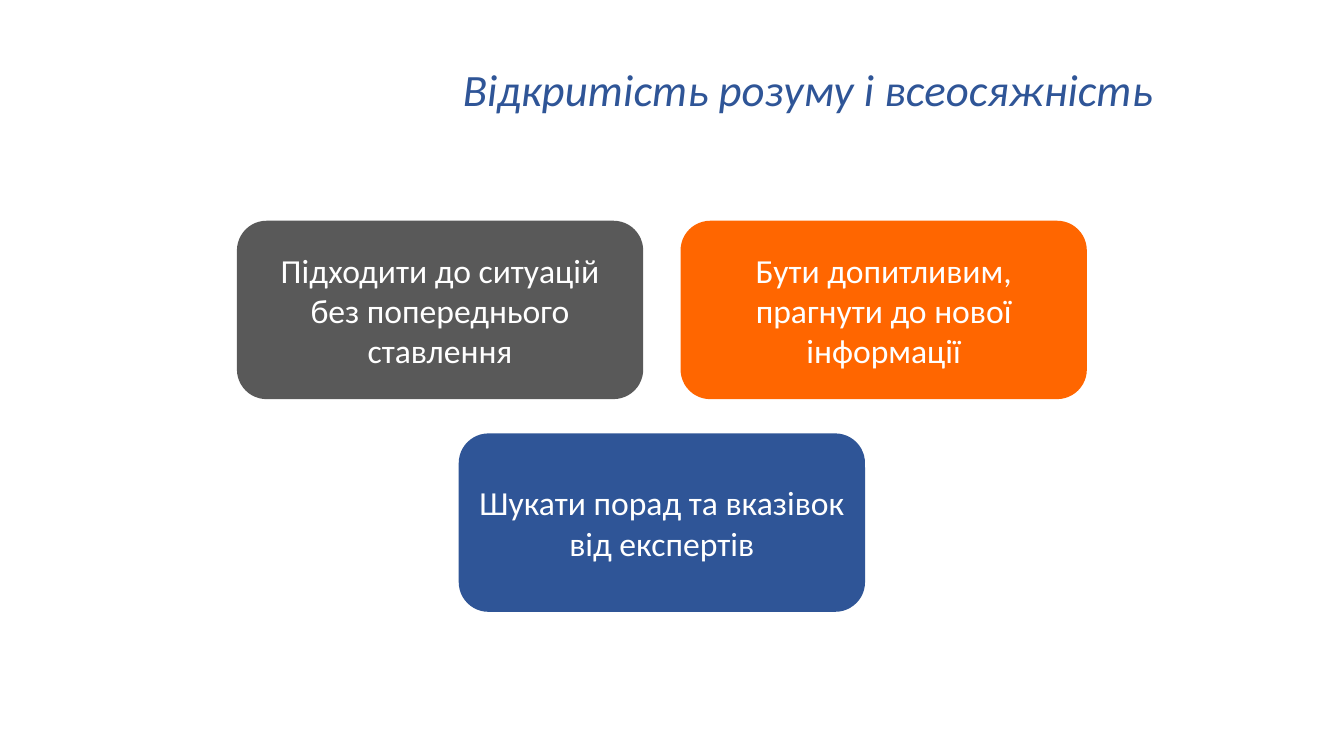
import pptx
import pptx.util
import pptx.dml.color
import pptx.enum.shapes
import pptx.enum.text

PX = 9144  # EMU in one px, 100 px to the inch
BLUE = "2F5597"
CARDS = [
    ("Підходити до ситуацій без попереднього ставлення", "595959"),
    ("Бути допитливим, прагнути до нової інформації", "FF6600"),
    ("Шукати порад та вказівок від експертів", BLUE),
]


def color(code):
    return pptx.dml.color.RGBColor.from_string(code)


def place(*box):
    return [pptx.util.Emu(n * PX) for n in box]


def style(par, size, code, align):
    par.alignment = align
    par.font.name = "Calibri"
    par.font.size = pptx.util.Pt(size)
    par.font.color.rgb = color(code)


def add_title(slide, text, box):
    title = slide.shapes.title
    title.left, title.top, title.width, title.height = place(*box)
    frame = title.text_frame
    frame.text = text
    frame.auto_size = pptx.enum.text.MSO_AUTO_SIZE.NONE
    frame.vertical_anchor = pptx.enum.text.MSO_ANCHOR.MIDDLE
    par = frame.paragraphs[0]
    par.line_spacing = 0.9
    style(par, 32, BLUE, pptx.enum.text.PP_ALIGN.LEFT)
    par.font.italic = True


def add_card(slide, text, fill, box):
    kind = pptx.enum.shapes.MSO_SHAPE.ROUNDED_RECTANGLE
    card = slide.shapes.add_shape(kind, *place(*box))
    card.shadow.inherit = False
    card.fill.solid()
    card.fill.fore_color.rgb = color(fill)
    card.line.fill.background()
    frame = card.text_frame
    frame.word_wrap = True
    frame.vertical_anchor = pptx.enum.text.MSO_ANCHOR.MIDDLE
    frame.text = text
    style(frame.paragraphs[0], 24, "FFFFFF", pptx.enum.text.PP_ALIGN.CENTER)


def add_cards(slide, cards, box):
    """Two cards to a row, with a lone last card centred."""
    left, top, width, height = box
    wide, high = 403, 177
    step_x, step_y = width - wide, height - high
    for i, (text, fill) in enumerate(cards):
        row, col = divmod(i, 2)
        lone = col == 0 and i == len(cards) - 1
        x = left + (step_x // 2 if lone else col * step_x)
        add_card(slide, text, fill, (x, top + row * step_y, wide, high))


def main():
    deck = pptx.Presentation()
    deck.slide_width, deck.slide_height = place(1333, 750)
    slide = deck.slides.add_slide(deck.slide_layouts[5])
    # Heading
    add_title(slide, "Відкритість розуму і всеосяжність", (449, 29, 793, 124))
    # Cards
    add_cards(slide, CARDS, (235, 219, 843, 388))
    deck.save("out.pptx")


if __name__ == "__main__":
    main()
